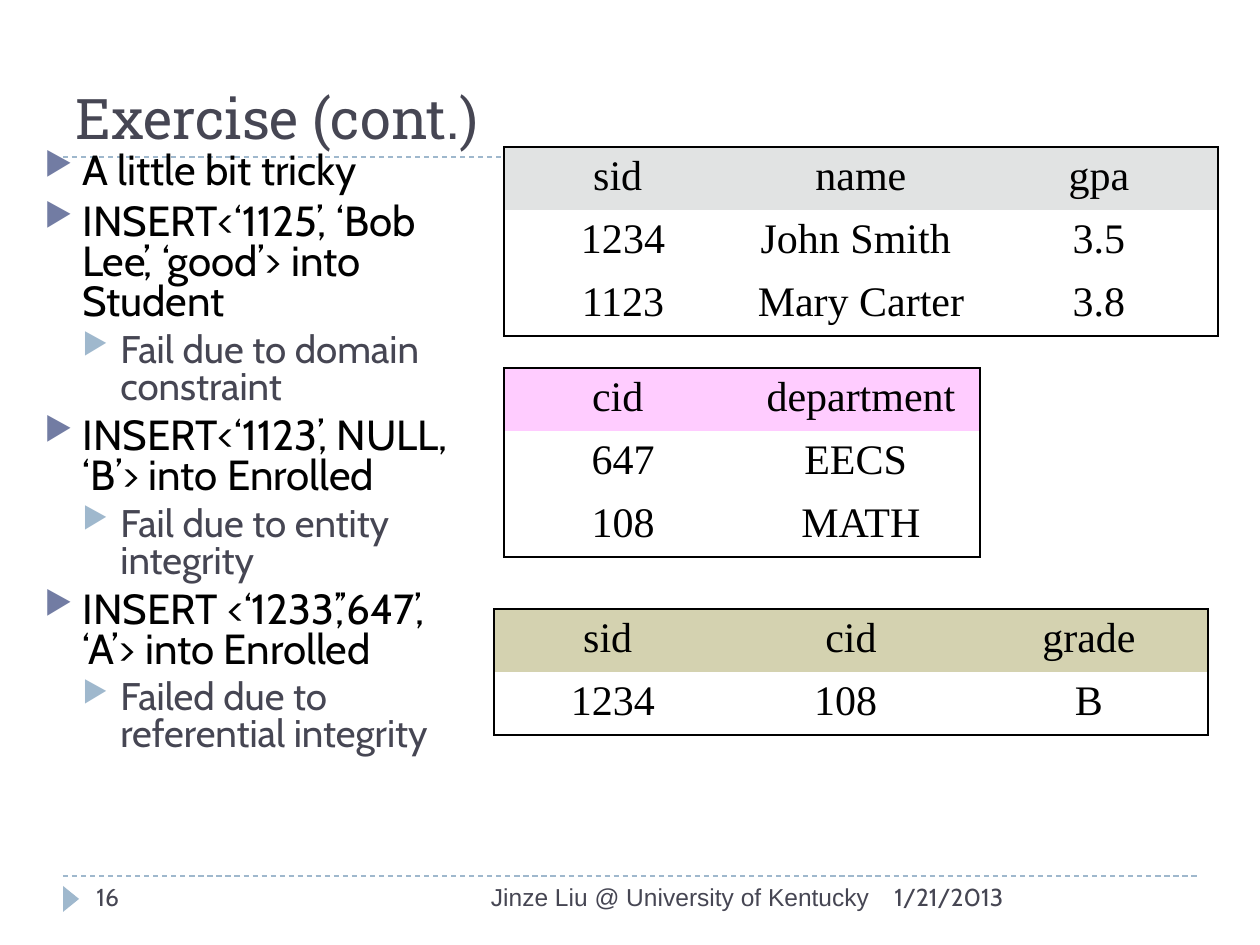
from dataclasses import dataclass

import pptx
import pptx.dml.color
import pptx.enum.dml
import pptx.enum.shapes
import pptx.enum.text
import pptx.oxml
import pptx.oxml.ns
import pptx.util

SCALE = 914400 // 126
ALIGN = pptx.enum.text.PP_ALIGN
ANCHOR = pptx.enum.text.MSO_ANCHOR
SHAPE = pptx.enum.shapes.MSO_SHAPE
NS = pptx.oxml.ns.nsdecls("a")


@dataclass(frozen=True)
class Theme:
    ink: str = "000000"
    slate: str = "464653"
    blue: str = "727CA3"
    pale: str = "9FB8CD"
    gray: str = "E1E3E3"
    pink: str = "FFCCFF"
    olive: str = "D4D2B0"
    head: str = "Roboto Slab"
    body: str = "Cabin"
    foot: str = "Arial"
    grid: str = "Times New Roman"
    title: int = 32
    main: int = 24
    sub: int = 22
    small: int = 14


@dataclass(frozen=True)
class Label:
    text: str
    box: tuple[int, int, int, int]
    font: str
    size: int
    align: ALIGN = ALIGN.LEFT
    anchor: ANCHOR = ANCHOR.TOP


@dataclass(frozen=True)
class Level:
    size: int
    color: str
    mark: str
    left: int
    gap: int


@dataclass(frozen=True)
class Grid:
    x: int
    y: int
    fill: str
    rows: list[list[str]]


T = Theme()
STEP = 38
COL, ROW = 238, 59
LEVELS = [
    Level(T.main, T.ink, T.blue, STEP, 6),
    Level(T.sub, T.slate, T.pale, 2 * STEP, 5),
]
LABELS = [
    Label("Exercise (cont.)", (63, 21, 1134, 136), T.head, T.title, anchor=ANCHOR.BOTTOM),
    Label("1/21/2013", (882, 876, 315, 50), T.body, T.small),
    Label("Jinze Liu @ University of Kentucky", (399, 876, 483, 50), T.foot, T.small,
          ALIGN.RIGHT),
    Label("16", (84, 876, 273, 50), T.body, T.small),
]
POINTS = [
    (0, "A little bit tricky"),
    (0, "INSERT<‘1125’, ‘Bob Lee’, ‘good’> into Student"),
    (1, "Fail due to domain constraint"),
    (0, "INSERT<‘1123’, NULL, ‘B’> into Enrolled"),
    (1, "Fail due to entity integrity"),
    (0, "INSERT <‘1233’,’647’, ‘A’> into Enrolled"),
    (1, "Failed due to referential integrity"),
]
GRIDS = [
    Grid(504, 147, T.gray, [["sid ", "name", "gpa"],
                            ["1234", "John Smith ", "3.5"],
                            ["1123", "Mary Carter ", "3.8"]]),
    Grid(504, 368, T.pink, [["cid ", "department"], ["647", "EECS "], ["108", "MATH"]]),
    Grid(494, 609, T.olive, [["sid ", "cid", "grade"], ["1234", "108 ", "B"]]),
]


def px(num: int) -> int:
    return pptx.util.Emu(num * SCALE)


def rgb(code: str) -> pptx.dml.color.RGBColor:
    return pptx.dml.color.RGBColor.from_string(code)


def style(para, font: str, size: int, color: str) -> None:
    for run in para.runs:
        run.font.name = font
        run.font.size = pptx.util.Pt(size)
        run.font.color.rgb = rgb(color)


def add_box(slide, box: tuple[int, int, int, int]):
    frame = slide.shapes.add_textbox(*map(px, box)).text_frame
    frame.word_wrap = True
    return frame


def add_label(slide, label: Label) -> None:
    frame = add_box(slide, label.box)
    frame.vertical_anchor = label.anchor
    frame.text = label.text
    para = frame.paragraphs[0]
    para.alignment = label.align
    style(para, label.font, label.size, T.slate)


def add_rule(slide, y: int) -> None:
    rule = slide.shapes.add_connector(
        pptx.enum.shapes.MSO_CONNECTOR.STRAIGHT, px(63), px(y), px(1197), px(y))
    rule.line.color.rgb = rgb(T.pale)
    rule.line.width = pptx.util.Pt(0.75)
    rule.line.dash_style = pptx.enum.dml.MSO_LINE.DASH
    rule._element.spPr.append(pptx.oxml.parse_xml(f"<a:effectLst {NS}/>"))


def add_mark(slide) -> None:
    """Draw the small arrow beside the page number."""
    mark = slide.shapes.add_shape(
        SHAPE.ISOSCELES_TRIANGLE, px(58), px(891), px(26), px(16))
    mark.rotation = 90
    mark.shadow.inherit = False
    mark.fill.solid()
    mark.fill.fore_color.rgb = rgb(T.pale)
    mark.line.fill.background()


def add_points(slide) -> None:
    frame = add_box(slide, (32, 147, 462, 725))
    frame.text = "\n".join(text for _, text in POINTS)
    for para, (depth, _) in zip(frame.paragraphs, POINTS):
        level = LEVELS[depth]
        para.level = depth
        para.line_spacing = 0.8
        para.space_before = pptx.util.Pt(level.gap)
        style(para, T.body, level.size, level.color)
        props = para._p.get_or_add_pPr()
        props.set("marL", str(px(level.left)))
        props.set("indent", str(px(-STEP)))
        for xml in (
            f'<a:buClr {NS}><a:srgbClr val="{level.mark}"/></a:buClr>',
            f'<a:buSzPct {NS} val="76000"/>',
            f'<a:buChar {NS} char="▶"/>',
        ):
            props.append(pptx.oxml.parse_xml(xml))


def set_edges(cell, edges: dict[str, bool]) -> None:
    props = cell._tc.get_or_add_tcPr()
    for spot, (side, drawn) in enumerate(edges.items()):
        paint = (f'<a:solidFill><a:srgbClr val="{T.ink}"/></a:solidFill>'
                 if drawn else "<a:noFill/>")
        props.insert(spot, pptx.oxml.parse_xml(
            f'<a:ln{side} {NS} w="12700">{paint}</a:ln{side}>'))


def add_grid(slide, grid: Grid) -> None:
    high, wide = len(grid.rows), len(grid.rows[0])
    table = slide.shapes.add_table(
        high, wide, px(grid.x), px(grid.y), px(wide * COL), px(high * ROW)).table
    table.first_row = table.horz_banding = False
    for r, row in enumerate(grid.rows):
        for c, text in enumerate(row):
            cell = table.cell(r, c)
            cell.text_frame.text = text
            para = cell.text_frame.paragraphs[0]
            para.alignment = ALIGN.CENTER
            style(para, T.grid, T.main, T.ink)
            if r == 0:
                cell.fill.solid()
                cell.fill.fore_color.rgb = rgb(grid.fill)
            else:
                cell.fill.background()
            set_edges(cell, {"L": c == 0, "R": c == wide - 1,
                             "T": r == 0, "B": r == high - 1})


def main() -> None:
    deck = pptx.Presentation()
    deck.slide_width, deck.slide_height = px(1260), px(945)
    slide = deck.slides.add_slide(deck.slide_layouts[6])
    for y in (876, 157):
        add_rule(slide, y)
    add_mark(slide)
    for label in LABELS:
        add_label(slide, label)
    add_points(slide)
    for grid in GRIDS:
        add_grid(slide, grid)
    deck.save("out.pptx")


if __name__ == "__main__":
    main()
